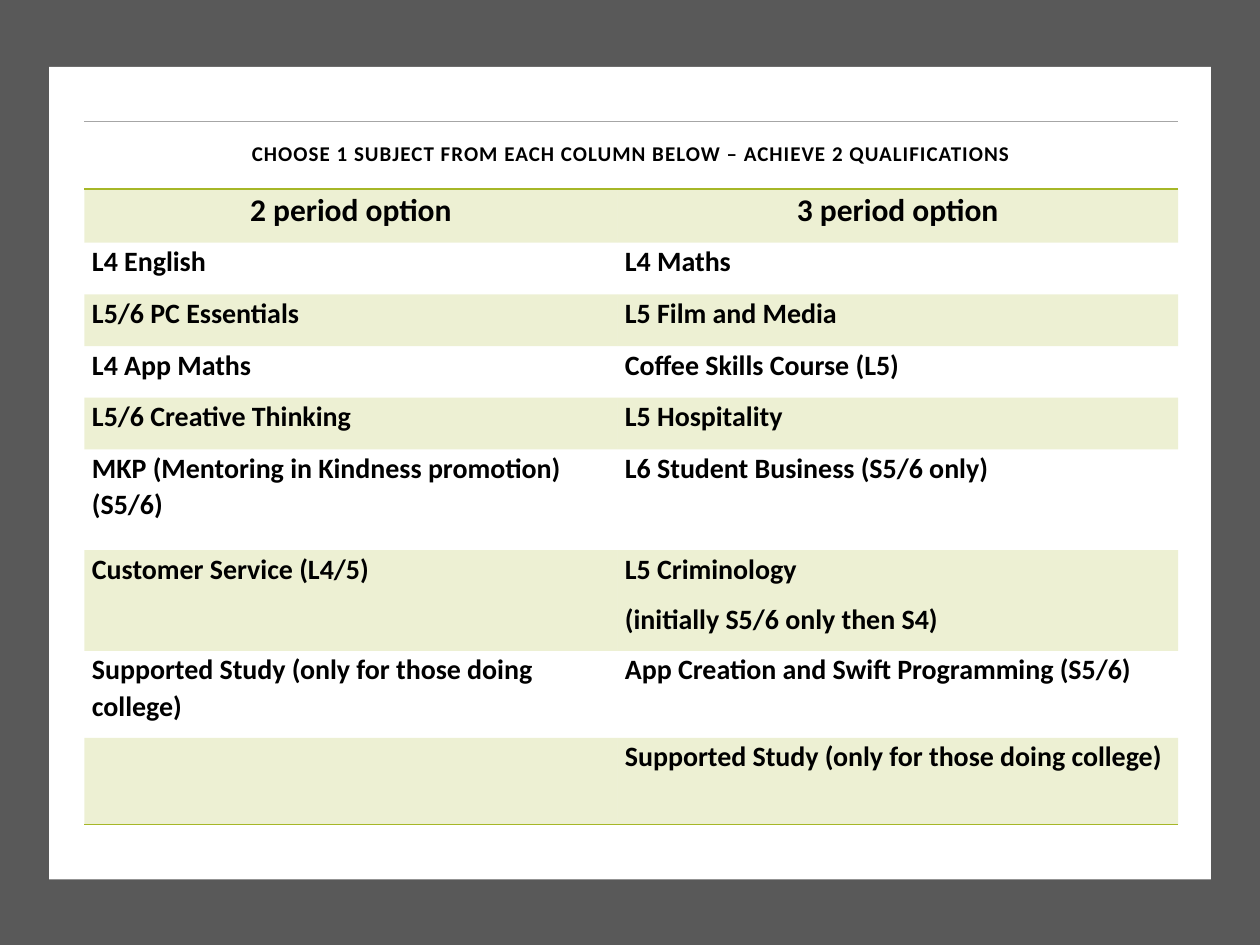
from lxml import etree
from pptx import Presentation
from pptx.dml.color import RGBColor
from pptx.enum import shapes, text
from pptx.oxml.ns import qn
from pptx.util import Inches, Pt

HEAD = "CHOOSE 1 SUBJECT FROM EACH COLUMN BELOW – ACHIEVE 2 QUALIFICATIONS"
ROWS = [
    (0.54, [HEAD]),
    (0.41, ["2 period option", "3 period option"]),
    (0.41, ["L4 English", "L4 Maths"]),
    (0.41, ["L5/6 PC Essentials", "L5 Film and Media"]),
    (0.41, ["L4 App Maths", "Coffee Skills Course (L5)"]),
    (0.41, ["L5/6 Creative Thinking", "L5 Hospitality"]),
    (0.8, ["MKP (Mentoring in Kindness promotion) (S5/6)",
           "L6 Student Business (S5/6 only)"]),
    (0.8, ["Customer Service (L4/5)",
           "L5 Criminology\n(initially S5/6 only then S4)"]),
    (0.69, ["Supported Study (only for those doing college)",
            "App Creation and Swift Programming (S5/6)"]),
    (0.69, ["", "Supported Study (only for those doing college)"]),
]
COLS = [4.23, 4.45]
PANELS = [("595959", (0, 0, 10, 7.5)), ("FFFFFF", (0.39, 0.53, 9.22, 6.45))]
GREEN, GREY = "A6B727", "A6A6A6"
PLAIN = "{2D5ABB26-0587-4C30-8999-92F81FD0307C}"


def paint(fill, color, alpha=None):
    fill.solid()
    fill.fore_color.rgb = RGBColor.from_string(color)
    if alpha:
        node = fill._xPr.find(".//" + qn("a:srgbClr"))
        etree.SubElement(node, qn("a:alpha"), val=str(alpha * 1000))


def write(cell, words, size=16, align=None, inset=(0.06, 0, 0.06, 0.1), gap=0):
    (cell.margin_left, cell.margin_top,
     cell.margin_right, cell.margin_bottom) = map(Inches, inset)
    cell.text = words
    for para in cell.text_frame.paragraphs:
        para.alignment = align
        para.line_spacing = 1.07
        para.space_after = Pt(8)
        para.font.size = Pt(size)
        for run in para.runs:
            font = run.font
            font.name, font.size, font.bold = "Calibri", Pt(size), True
            font.color.rgb = RGBColor.from_string("000000")
            if gap:
                font._element.set("spc", str(int(gap * 100)))


def edge(cell, lines):
    props = cell._tc.get_or_add_tcPr()
    for spot, (side, color, width) in enumerate(lines):
        line = etree.Element(qn("a:ln" + side), w=str(Pt(width)))
        fill = etree.SubElement(line, qn("a:solidFill"))
        etree.SubElement(fill, qn("a:srgbClr"), val=color)
        props.insert(spot, line)


deck = Presentation()
deck.slide_width, deck.slide_height = Inches(10), Inches(7.5)
slide = deck.slides.add_slide(deck.slide_layouts[6])
paint(slide.background.fill, GREEN)

for color, box in PANELS:
    panel = slide.shapes.add_shape(shapes.MSO_SHAPE.RECTANGLE, *map(Inches, box))
    panel.shadow.inherit = False
    paint(panel.fill, color)
    panel.line.fill.background()

high = sum(row[0] for row in ROWS)
frame = slide.shapes.add_table(len(ROWS), len(COLS), Inches(0.67), Inches(0.96),
                               Inches(sum(COLS)), Inches(high))
table = frame.table
table.first_row = table.horz_banding = False
table._tbl.tblPr.find(qn("a:tableStyleId")).text = PLAIN
for col, width in zip(table.columns, COLS):
    col.width = Inches(width)
table.cell(0, 0).merge(table.cell(0, 1))

mid = text.PP_ALIGN.CENTER
last = len(ROWS) - 1
for r, (tall, words) in enumerate(ROWS):
    table.rows[r].height = Inches(tall)
    for c, label in enumerate(words):
        cell = table.cell(r, c)
        if r == 0:
            write(cell, label, size=12, align=mid, inset=[0.15] * 4, gap=0.6)
        elif r == 1:
            write(cell, label, size=18, align=mid)
        else:
            write(cell, label)
        if r % 2:
            paint(cell.fill, GREEN, alpha=20)
        else:
            cell.fill.background()

for c in range(len(COLS)):
    edge(table.cell(0, c), [("T", GREY, 0.5), ("B", GREEN, 1)])
    edge(table.cell(last, c), [("B", GREEN, 1)])

deck.save("out.pptx")
